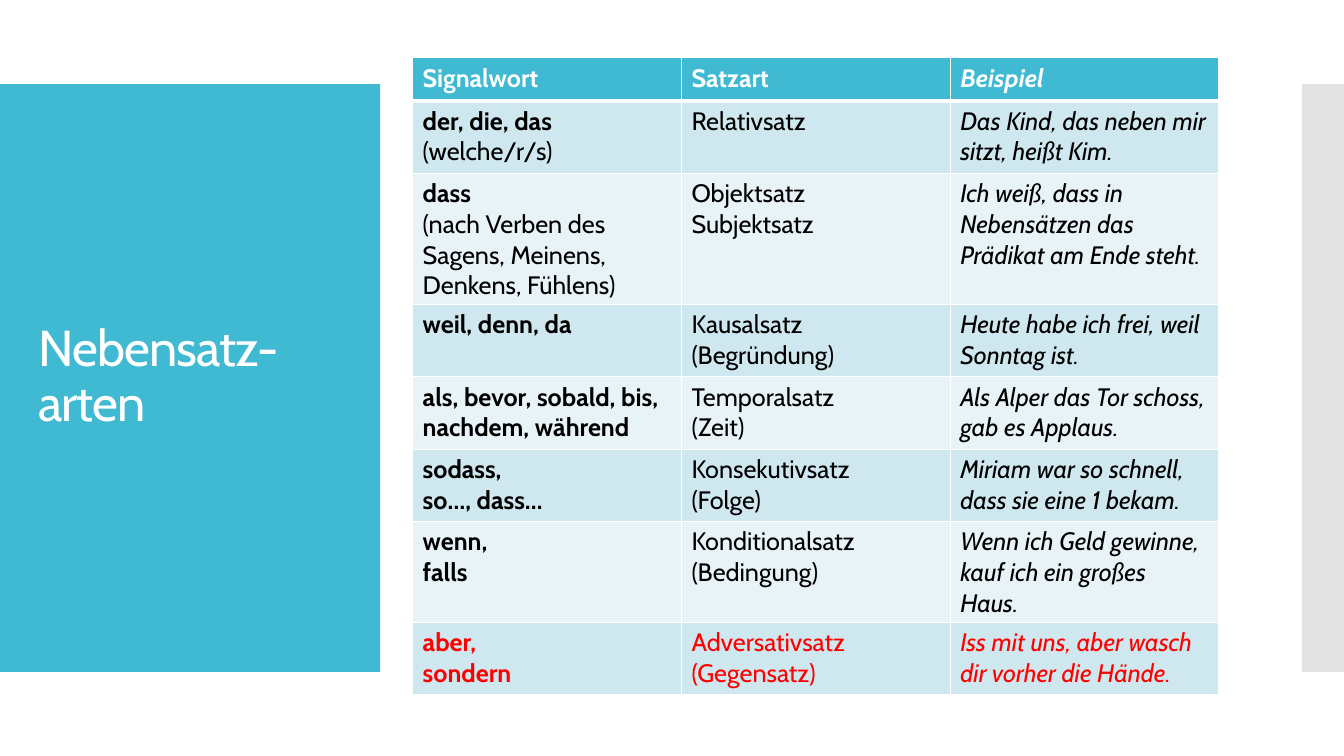
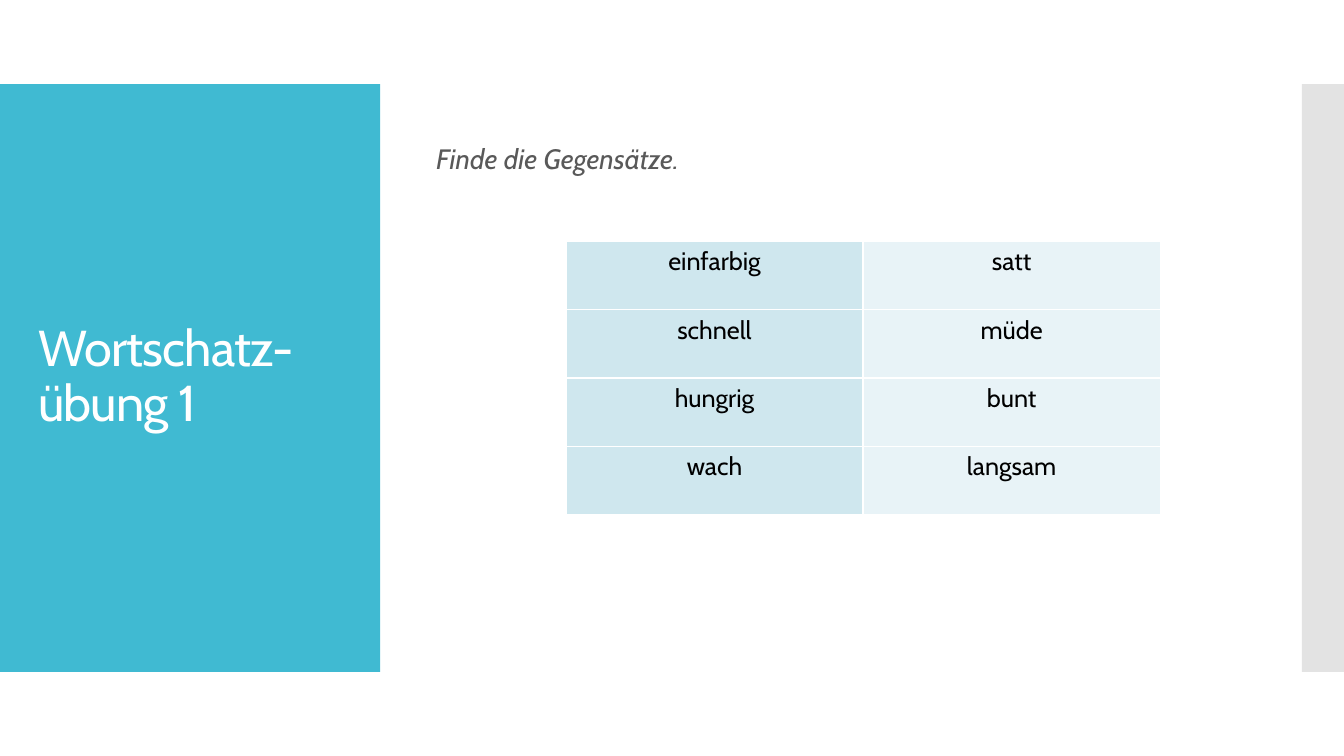
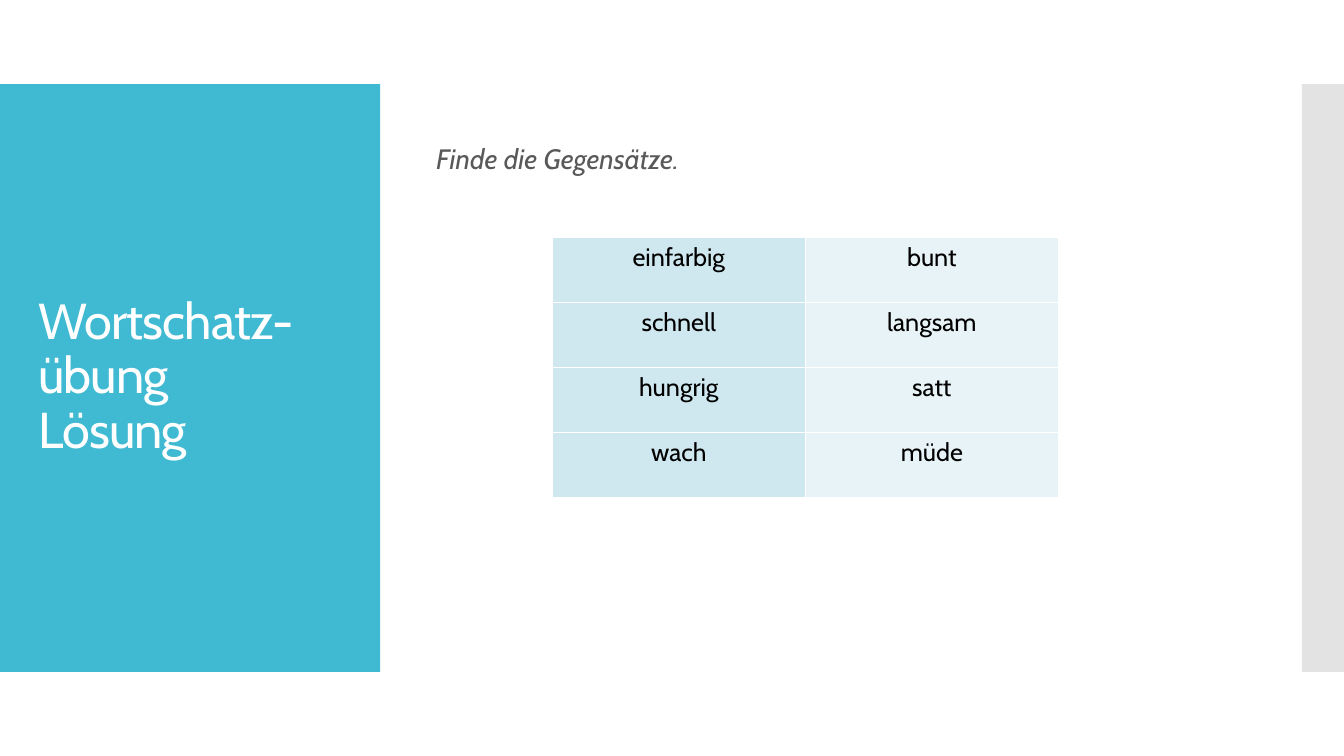
"""Builds three German grammar slides on subordinate clauses and opposites."""
from lxml.etree import SubElement
from pptx import Presentation
from pptx.dml.color import RGBColor
from pptx.enum.shapes import MSO_SHAPE
from pptx.enum.text import MSO_ANCHOR, PP_ALIGN
from pptx.oxml.ns import qn
from pptx.util import Emu, Pt

FONT = "Cabin"
COLORS = {
    "accent": "40BAD2",
    "side": "C8C8C8",
    "band_dark": "CFE7EE",
    "band_light": "E8F3F7",
    "white": "FFFFFF",
    "black": "000000",
    "gray": "595959",
    "red": "FF0000",
}
THIN_BORDER = 0.96
HEADER_BORDER = 3
CLAUSE_HEADER = ("Signalwort", "Satzart", "Beispiel")
CLAUSE_ROWS = [
    ("der, die, das\n(welche/r/s)", "Relativsatz", "Das Kind, das neben mir sitzt, heißt Kim."),
    ("dass\n(nach Verben des Sagens, Meinens, Denkens, Fühlens)", "Objektsatz\nSubjektsatz",
     "Ich weiß, dass in Nebensätzen das Prädikat am Ende steht."),
    ("weil, denn, da", "Kausalsatz\n(Begründung)", "Heute habe ich frei, weil Sonntag ist."),
    ("als, bevor, sobald, bis, nachdem, während", "Temporalsatz\n(Zeit)",
     "Als Alper das Tor schoss, gab es Applaus."),
    ("sodass,\nso…, dass…", "Konsekutivsatz\n(Folge)",
     "Miriam war so schnell, dass sie eine 1 bekam."),
    ("wenn,\nfalls", "Konditionalsatz\n(Bedingung)",
     "Wenn ich Geld gewinne, kauf ich ein großes Haus."),
    ("aber,\nsondern", "Adversativsatz\n(Gegensatz)",
     "Iss mit uns, aber wasch dir vorher die Hände."),
]
WORDS = ("einfarbig", "schnell", "hungrig", "wach")
SHUFFLED = ("satt", "müde", "bunt", "langsam")
OPPOSITES = ("bunt", "langsam", "satt", "müde")


def px(length):
    """Turn pixels into EMU."""
    return Emu(length * 9525)


def color(name):
    """Look up a named colour."""
    return RGBColor.from_string(COLORS[name])


def add_run(paragraph, text, size, color_name, bold=False, italic=False):
    """Append one formatted run and return it."""
    run = paragraph.add_run()
    run.text = text
    font = run.font
    font.name, font.size, font.bold, font.italic = FONT, Pt(size), bold, italic
    font.color.rgb = color(color_name)
    return run


def add_band(slide, left, width, color_name, opacity=None):
    """Draw one of the vertical bands at the slide edges."""
    band = slide.shapes.add_shape(MSO_SHAPE.RECTANGLE, px(left), px(80), px(width), px(560))
    band.shadow.inherit = False
    band.fill.solid()
    band.fill.fore_color.rgb = color(color_name)
    band.line.fill.background()
    if opacity is not None:
        value = band.fill._xPr.find(".//" + qn("a:srgbClr"))
        SubElement(value, qn("a:alpha"), val=str(opacity * 1000))


def add_text_box(slide, left, top, width, height):
    """Add a wrapping, vertically centred text box and return its frame."""
    frame = slide.shapes.add_textbox(px(left), px(top), px(width), px(height)).text_frame
    frame.word_wrap = True
    frame.vertical_anchor = MSO_ANCHOR.MIDDLE
    frame.paragraphs[0].line_spacing = 0.9
    return frame


def add_titled_slide(presentation, title):
    """Add a blank slide with both bands and the title."""
    slide = presentation.slides.add_slide(presentation.slide_layouts[6])
    add_band(slide, 0, 362, "accent")
    add_band(slide, 1240, 40, "side", 50)
    paragraph = add_text_box(slide, 27, 118, 309, 483).paragraphs[0]
    for index, line in enumerate(title.split("\n")):
        if index:
            paragraph.add_line_break()
        run = add_run(paragraph, line, 36, "white")
        run._r.get_or_add_rPr().set("spc", "-60")
    return slide


def add_instruction(slide, text):
    """Write the exercise instruction above the table."""
    frame = add_text_box(slide, 406, 90, 768, 156)
    frame.margin_bottom = px(35)
    add_run(frame.paragraphs[0], text, 20, "gray", italic=True)


def add_grid(slide, left, top, column_width, row_heights, column_count):
    """Add a table with equal columns and the given row heights."""
    table = slide.shapes.add_table(
        len(row_heights), column_count, px(left), px(top),
        px(column_width * column_count), px(sum(row_heights))).table
    for column in table.columns:
        column.width = px(column_width)
    for row, height in zip(table.rows, row_heights):
        row.height = px(height)
    return table


def style_cell(cell, fill_name, top=THIN_BORDER, bottom=THIN_BORDER):
    """Give a cell white borders and a solid fill."""
    properties = cell._tc.get_or_add_tcPr()
    borders = {"L": THIN_BORDER, "R": THIN_BORDER, "T": top, "B": bottom}
    for side, width in borders.items():
        line = SubElement(properties, qn("a:ln" + side), w=str(int(Pt(width))))
        SubElement(SubElement(line, qn("a:solidFill")), qn("a:srgbClr"), val=COLORS["white"])
    cell.fill.solid()
    cell.fill.fore_color.rgb = color(fill_name)


def write_cell(cell, text, color_name, bold=False, italic=False, alignment=None):
    """Write lines as paragraphs, keeping bracketed lines regular."""
    frame = cell.text_frame
    for index, line in enumerate(text.split("\n")):
        paragraph = frame.add_paragraph() if index else frame.paragraphs[0]
        paragraph.alignment = alignment
        add_run(paragraph, line, 18, color_name, bold and not line.startswith("("), italic)


def add_clause_table(slide):
    """Add the overview of subordinate clause types."""
    table = add_grid(slide, 393, 55, 256, [41] + [69] * len(CLAUSE_ROWS), len(CLAUSE_HEADER))
    for column, text in enumerate(CLAUSE_HEADER):
        cell = table.cell(0, column)
        style_cell(cell, "accent", bottom=HEADER_BORDER)
        write_cell(cell, text, "white", bold=True, italic=column == 2)
    for row, texts in enumerate(CLAUSE_ROWS, 1):
        fill_name = "band_dark" if row % 2 else "band_light"
        text_color = "red" if row == len(CLAUSE_ROWS) else "black"
        top = HEADER_BORDER if row == 1 else THIN_BORDER
        for column, text in enumerate(texts):
            cell = table.cell(row, column)
            style_cell(cell, fill_name, top=top)
            write_cell(cell, text, text_color, bold=column == 0, italic=column == 2)


def add_word_table(slide, left, top, column_width, row_height, partners):
    """Add the two columns of adjectives."""
    table = add_grid(slide, left, top, column_width, [row_height] * len(WORDS), 2)
    table.first_row = table.horz_banding = False
    for row, pair in enumerate(zip(WORDS, partners)):
        for column, fill_name in enumerate(("band_dark", "band_light")):
            cell = table.cell(row, column)
            style_cell(cell, fill_name)
            write_cell(cell, pair[column], "black", alignment=PP_ALIGN.CENTER)


def add_exercise(presentation, title, partners, **grid):
    """Add a vocabulary slide with its instruction and word table."""
    slide = add_titled_slide(presentation, title)
    add_instruction(slide, "Finde die Gegensätze.")
    add_word_table(slide, partners=partners, **grid)


def main():
    """Build and save the presentation."""
    presentation = Presentation()
    presentation.slide_width, presentation.slide_height = px(1280), px(720)
    add_clause_table(add_titled_slide(presentation, "Nebensatz-arten"))
    add_exercise(presentation, "Wortschatz-übung 1", SHUFFLED,
                 left=539, top=230, column_width=283, row_height=65)
    add_exercise(presentation, "Wortschatz-übung\nLösung", OPPOSITES,
                 left=526, top=226, column_width=241, row_height=62)
    presentation.save("out.pptx")


if __name__ == "__main__":
    main()
